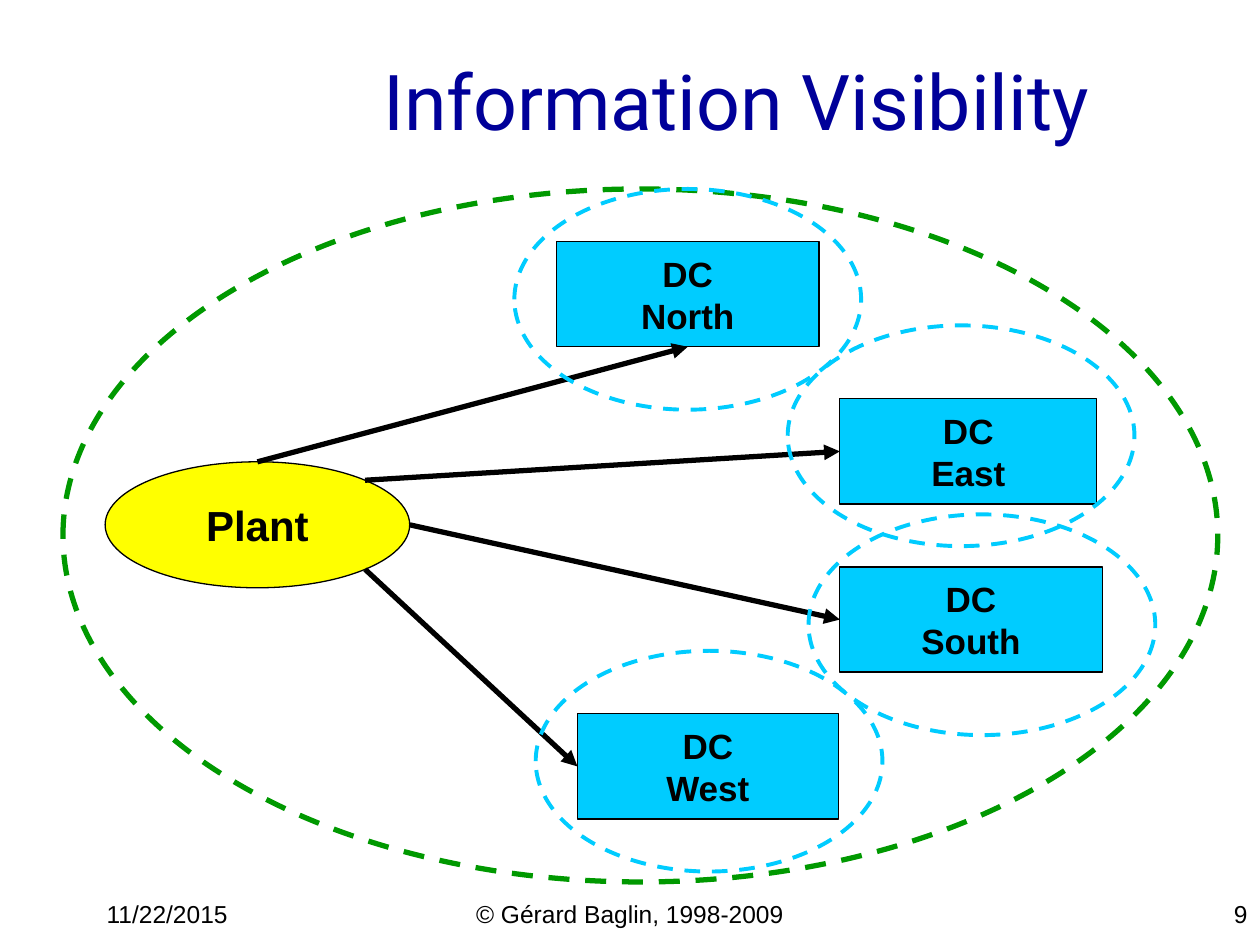
from dataclasses import dataclass
from math import cos, radians, sin

from lxml.etree import SubElement
from pptx import Presentation
from pptx.dml.color import RGBColor
from pptx.enum.dml import MSO_LINE
from pptx.enum.shapes import MSO_CONNECTOR, MSO_SHAPE
from pptx.enum.text import MSO_ANCHOR, MSO_AUTO_SIZE, PP_ALIGN
from pptx.oxml.ns import qn
from pptx.shapes.autoshape import Shape
from pptx.slide import Slide
from pptx.util import Cm, Pt


@dataclass(frozen=True)
class Theme:
    font: str = "Arial"
    head: str = "Roboto"
    black: str = "000000"
    navy: str = "000099"
    yellow: str = "FFFF00"
    cyan: str = "00CCFF"
    green: str = "009900"
    title: int = 44
    plant: int = 24
    depot: int = 20
    foot: int = 14
    thin: float = 0.75
    ring: float = 2.25
    thick: float = 3


@dataclass(frozen=True)
class Box:
    left: float
    top: float
    width: float
    height: float

    def place(self) -> tuple[Cm, Cm, Cm, Cm]:
        return Cm(self.left), Cm(self.top), Cm(self.width), Cm(self.height)

    def rim(self, angle: float) -> tuple[Cm, Cm]:
        turn = radians(angle)
        return (Cm(self.left + self.width / 2 * (1 + cos(turn))),
                Cm(self.top + self.height / 2 * (1 - sin(turn))))


@dataclass(frozen=True)
class Depot:
    name: str
    box: Box
    ring: Box
    angle: float
    side: int


@dataclass(frozen=True)
class Note:
    text: str
    box: Box
    align: PP_ALIGN


THEME = Theme()
HIGH = 2.12
RING = (6.99, 4.45)
FOOT = 17.99
PLANT = Box(2.12, 9.31, 6.14, 2.54)
AREA = Box(1.27, 3.81, 23.28, 13.97)
DEPOTS = [
    Depot("North", Box(11.22, 4.87, 5.29, HIGH), Box(10.37, 3.81, *RING), 90, 2),
    Depot("West", Box(11.64, 14.39, 5.26, HIGH), Box(10.8, 13.12, *RING), -45, 1),
    Depot("East", Box(16.93, 8.04, 5.18, HIGH), Box(15.88, 6.56, *RING), 45, 1),
    Depot("South", Box(16.93, 11.43, 5.29, HIGH), Box(16.3, 10.37, *RING), 0, 1),
]
NOTES = [
    Note("11/22/2015", Box(1.9, FOOT, 5.29, 0.64), PP_ALIGN.LEFT),
    Note("© Gérard Baglin, 1998-2009", Box(8.68, FOOT, 8.04, 0.64), PP_ALIGN.CENTER),
    Note("9", Box(20.11, FOOT, 5.29, 0.64), PP_ALIGN.RIGHT),
]


def write(shape: Shape, lines: list[str], size: int, align: PP_ALIGN,
          font: str = THEME.font, color: str = THEME.black, bold: bool = False) -> None:
    frame = shape.text_frame
    for i, line in enumerate(lines):
        para = frame.add_paragraph() if i else frame.paragraphs[0]
        para.alignment = align
        run = para.add_run()
        run.text = line
        run.font.name = font
        run.font.size = Pt(size)
        run.font.bold = bold
        run.font.color.rgb = RGBColor.from_string(color)


def add_title(slide: Slide, text: str) -> None:
    title = slide.shapes.title
    title.left, title.top, title.width, title.height = Box(0.64, 0.42, 21.59, 3.18).place()
    title.text_frame.auto_size = MSO_AUTO_SIZE.NONE
    title.text_frame.vertical_anchor = MSO_ANCHOR.MIDDLE
    write(title, [text], THEME.title, PP_ALIGN.RIGHT, THEME.head, THEME.navy)


def add_note(slide: Slide, note: Note) -> None:
    shape = slide.shapes.add_textbox(*note.box.place())
    shape.text_frame.word_wrap = True
    write(shape, [note.text], THEME.foot, note.align)


def add_node(slide: Slide, kind: MSO_SHAPE, box: Box, fill: str,
             lines: list[str], size: int) -> Shape:
    node = slide.shapes.add_shape(kind, *box.place())
    node.shadow.inherit = False
    node.fill.solid()
    node.fill.fore_color.rgb = RGBColor.from_string(fill)
    node.line.color.rgb = RGBColor.from_string(THEME.black)
    node.line.width = Pt(THEME.thin)
    node.text_frame.word_wrap = False
    node.text_frame.vertical_anchor = MSO_ANCHOR.MIDDLE
    write(node, lines, size, PP_ALIGN.CENTER, bold=True)
    return node


def add_ring(slide: Slide, box: Box, color: str, width: float) -> None:
    ring = slide.shapes.add_shape(MSO_SHAPE.OVAL, *box.place())
    ring.shadow.inherit = False
    ring.fill.background()
    ring.line.color.rgb = RGBColor.from_string(color)
    ring.line.width = Pt(width)
    ring.line.dash_style = MSO_LINE.DASH


def add_arrow(slide: Slide, start: tuple[Cm, Cm], goal: Shape, side: int) -> None:
    arrow = slide.shapes.add_connector(MSO_CONNECTOR.STRAIGHT, *start, *start)
    arrow.end_connect(goal, side)
    arrow.line.color.rgb = RGBColor.from_string(THEME.black)
    arrow.line.width = Pt(THEME.thick)
    SubElement(arrow.line._get_or_add_ln(), qn("a:tailEnd"), type="triangle")
    SubElement(arrow._element.spPr, qn("a:effectLst"))


def main() -> None:
    deck = Presentation()
    deck.slide_width, deck.slide_height = Cm(25.4), Cm(19.05)
    slide = deck.slides.add_slide(deck.slide_layouts[5])
    for note in NOTES:
        add_note(slide, note)
    add_title(slide, "Information Visibility")
    add_node(slide, MSO_SHAPE.OVAL, PLANT, THEME.yellow, ["Plant"], THEME.plant)
    nodes = [add_node(slide, MSO_SHAPE.RECTANGLE, depot.box, THEME.cyan,
                      ["DC", depot.name], THEME.depot) for depot in DEPOTS]
    for depot, node in zip(DEPOTS, nodes):
        add_arrow(slide, PLANT.rim(depot.angle), node, depot.side)
    add_ring(slide, AREA, THEME.green, THEME.thick)
    for depot in DEPOTS:
        add_ring(slide, depot.ring, THEME.cyan, THEME.ring)
    deck.save("out.pptx")


if __name__ == "__main__":
    main()
